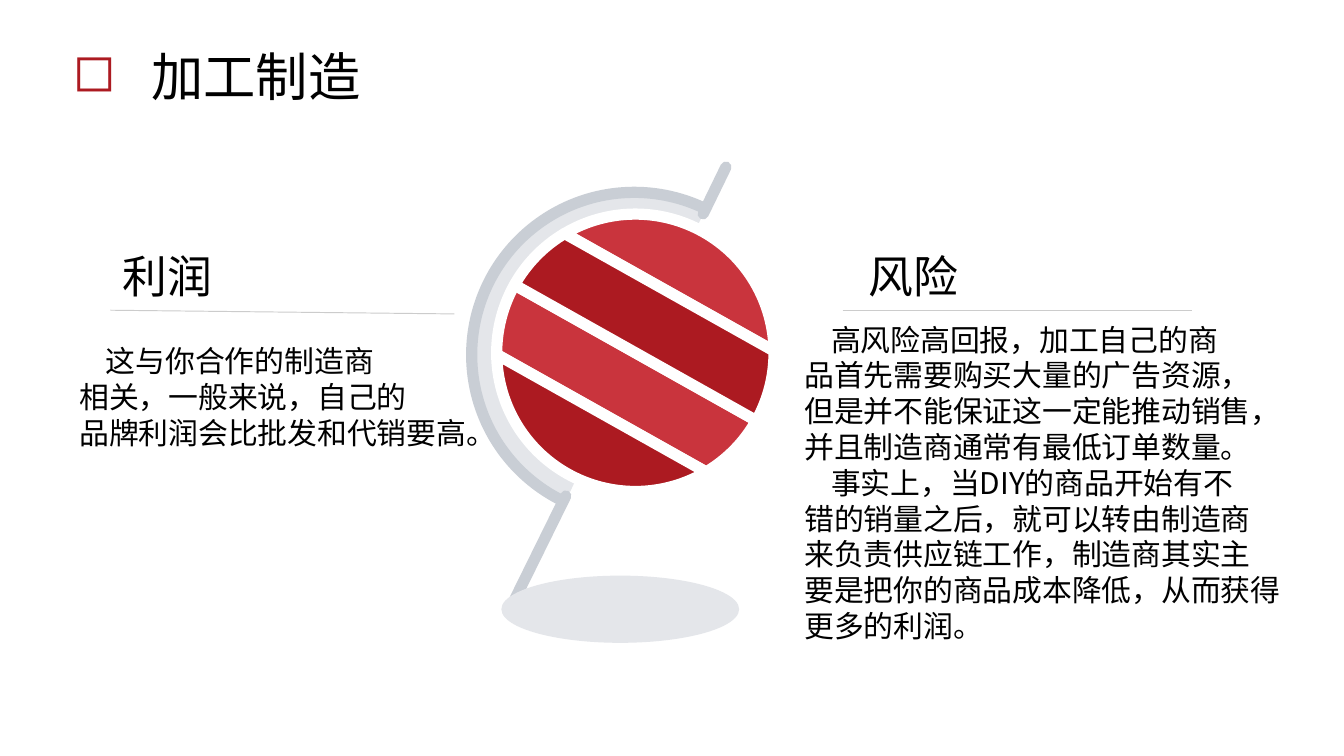
"""Build a slide on own-brand manufacturing with a striped globe between profit and risk."""
import math
from dataclasses import dataclass

import lxml.etree
import pptx
import pptx.dml.color
import pptx.enum.shapes
import pptx.enum.text
import pptx.oxml.ns
import pptx.util

Pt = pptx.util.Pt
RGBColor = pptx.dml.color.RGBColor
Shapes = pptx.enum.shapes.MSO_SHAPE
qn = pptx.oxml.ns.qn

FONT = "Noto Sans CJK SC"
BLACK = RGBColor(0x00, 0x00, 0x00)
WHITE = RGBColor(0xFF, 0xFF, 0xFF)
DARK_RED = RGBColor(0xAC, 0x1A, 0x21)
LIGHT_RED = RGBColor(0xC9, 0x34, 0x3D)
STEEL = RGBColor(0xC9, 0xCE, 0xD5)
PALE = RGBColor(0xE4, 0xE6, 0xEA)
RULE = RGBColor(0xCC, 0xCC, 0xCC)

GLOBE_X, GLOBE_Y, GLOBE_RADIUS = 340.4, 189, 74.3
TILT = 29.3
FIRST_LINE_INDENT = 14.3


@dataclass
class Line:
    start: tuple[float, float]
    end: tuple[float, float]


@dataclass
class Column:
    heading: str
    heading_left: float
    body_left: float
    body_top: float
    body_width: float
    paragraphs: list[list[str]]
    rule: Line


@dataclass
class Band:
    upper: float
    lower: float
    color: RGBColor


COLUMNS = [
    Column("风险", 465.3, 430.9, 172.1, 188.6, [
        ["高风险高回报，加工自己的商", "品首先需要购买大量的广告资源，",
         "但是并不能保证这一定能推动销售，", "并且制造商通常有最低订单数量。"],
        ["事实上，当DIY的商品开始有不", "错的销量之后，就可以转由制造商",
         "来负责供应链工作，制造商其实主", "要是把你的商品成本降低，从而获得",
         "更多的利润。"],
    ], Line((451.4, 166.3), (638.6, 166.3))),
    Column("利润", 65.9, 42.5, 183.6, 200.9, [
        ["这与你合作的制造商", "相关，一般来说，自己的", "品牌利润会比批发和代销要高。"],
    ], Line((59.2, 166.2), (243.4, 168.2))),
]
STAND = [Line((275.8, 321.1), (303.1, 265.7)), Line((376.7, 114.6), (388.9, 89.5))]
BANDS = [Band(-1, -0.5, LIGHT_RED), Band(0, 0.5, LIGHT_RED),
         Band(-0.5, 0, DARK_RED), Band(0.5, 1, DARK_RED)]


def write_line(para, text: str, size: float, indent: float = 0) -> None:
    para.alignment = pptx.enum.text.PP_ALIGN.JUSTIFY
    para.line_spacing = Pt(size * 1.2)
    if indent:
        para._p.get_or_add_pPr().set("indent", str(Pt(indent)))
    span = para.add_run()
    span.text = text
    span.font.name = FONT
    span.font.size = Pt(size)
    span.font.bold = False
    span.font.color.rgb = BLACK
    east_asian = lxml.etree.SubElement(span.font._element, qn("a:ea"))
    east_asian.set("typeface", FONT)


def add_text(page, left: float, top: float, width: float, height: float, size: float,
             paragraphs: list[list[str]], indent: float = 0) -> None:
    box = page.shapes.add_textbox(Pt(left), Pt(top), Pt(width), Pt(height))
    frame = box.text_frame
    frame.word_wrap = False
    frame.auto_size = pptx.enum.text.MSO_AUTO_SIZE.NONE
    frame.margin_left = frame.margin_right = 0
    frame.margin_top = frame.margin_bottom = 0
    lines = [(text, indent if number == 0 else 0)
             for block in paragraphs for number, text in enumerate(block)]
    for number, (text, line_indent) in enumerate(lines):
        para = frame.add_paragraph() if number else frame.paragraphs[0]
        write_line(para, text, size, line_indent)


def add_line(page, line: Line, color: RGBColor, width: float, cap: str = "flat") -> None:
    connector = page.shapes.add_connector(
        pptx.enum.shapes.MSO_CONNECTOR.STRAIGHT,
        *(Pt(value) for value in line.start + line.end))
    connector.line.color.rgb = color
    connector.line.width = Pt(width)
    properties = connector._element.spPr
    properties.find(qn("a:ln")).set("cap", cap)
    lxml.etree.SubElement(properties, qn("a:effectLst"))


def rim_curve(upper: float, lower: float) -> list[tuple[float, float]]:
    """Return the four Bezier points of the right rim between two heights on a unit circle."""
    start, end = math.asin(upper), math.asin(lower)
    reach = 4 / 3 * math.tan((end - start) / 4)
    first = (math.cos(start), math.sin(start))
    last = (math.cos(end), math.sin(end))
    return [first, (first[0] - reach * first[1], first[1] + reach * first[0]),
            (last[0] + reach * last[1], last[1] - reach * last[0]), last]


def add_band(page, band: Band) -> None:
    right = rim_curve(band.upper, band.lower)
    left = [(-x, y) for x, y in reversed(right)]
    points = [(Pt(GLOBE_X + GLOBE_RADIUS * x), Pt(GLOBE_Y + GLOBE_RADIUS * y))
              for x, y in right + left]
    builder = page.shapes.build_freeform(*points[0])
    builder.add_line_segments(points[1:], close=True)
    shape = builder.convert_to_shape()
    segments = list(shape._element.iter(qn("a:lnTo")))
    for first in (0, 4):
        curve = lxml.etree.Element(qn("a:cubicBezTo"))
        segments[first].addprevious(curve)
        for segment in segments[first:first + 3]:
            curve.append(segment[0])
            segment.getparent().remove(segment)
    offset = GLOBE_RADIUS * (band.upper + band.lower) / 2
    angle = math.radians(TILT)
    shape.left -= Pt(offset * math.sin(angle))
    shape.top += Pt(offset * (math.cos(angle) - 1))
    shape.rotation = TILT
    shape.shadow.inherit = False
    shape.fill.solid()
    shape.fill.fore_color.rgb = band.color
    shape.line.color.rgb = WHITE
    shape.line.width = Pt(6)


def add_pale_shape(page, kind: Shapes, left: float, top: float, width: float, height: float):
    shape = page.shapes.add_shape(kind, Pt(left), Pt(top), Pt(width), Pt(height))
    shape.shadow.inherit = False
    shape.fill.solid()
    shape.fill.fore_color.rgb = PALE
    shape.line.fill.background()
    return shape


def add_globe(page) -> None:
    frame = add_pale_shape(page, Shapes.ARC, 252.7, 103, 174.2, 174.2)
    frame.adjustments[0] = 107.4
    frame.adjustments[1] = 0
    frame.rotation = 296.1
    frame.line.color.rgb = STEEL
    frame.line.width = Pt(6)
    for rod in STAND:
        add_line(page, rod, STEEL, 6, "rnd")
    add_pale_shape(page, Shapes.OVAL, 268.6, 308.4, 127.4, 36)
    for band in BANDS:
        add_band(page, band)


def format_title(title, text: str) -> None:
    title.left, title.top, title.width, title.height = Pt(31.7), Pt(20.2), Pt(200.9), Pt(41)
    frame = title.text_frame
    frame.auto_size = pptx.enum.text.MSO_AUTO_SIZE.NONE
    frame.vertical_anchor = pptx.enum.text.MSO_ANCHOR.TOP
    frame.margin_left = frame.margin_right = Pt(7.2)
    frame.margin_top = frame.margin_bottom = Pt(3.6)
    para = frame.paragraphs[0]
    write_line(para, text, 28, -42.3)
    properties = para._p.get_or_add_pPr()
    properties.set("marL", str(Pt(42.3)))
    color = lxml.etree.SubElement(properties, qn("a:buClr"))
    lxml.etree.SubElement(color, qn("a:srgbClr")).set("val", str(DARK_RED))
    lxml.etree.SubElement(properties, qn("a:buChar")).set("char", "◻")


def main() -> None:
    deck = pptx.Presentation()
    deck.slide_width, deck.slide_height = Pt(720), Pt(405)
    page = deck.slides.add_slide(deck.slide_layouts[5])
    format_title(page.shapes.title, "加工制造")
    add_globe(page)
    for column in COLUMNS:
        add_text(page, column.heading_left, 133.2, 154.1, 18, 24, [[column.heading]])
        add_text(page, column.body_left, column.body_top, column.body_width, 131, 16,
                 column.paragraphs, FIRST_LINE_INDENT)
        add_line(page, column.rule, RULE, 0.5)
    deck.save("out.pptx")


if __name__ == "__main__":
    main()
